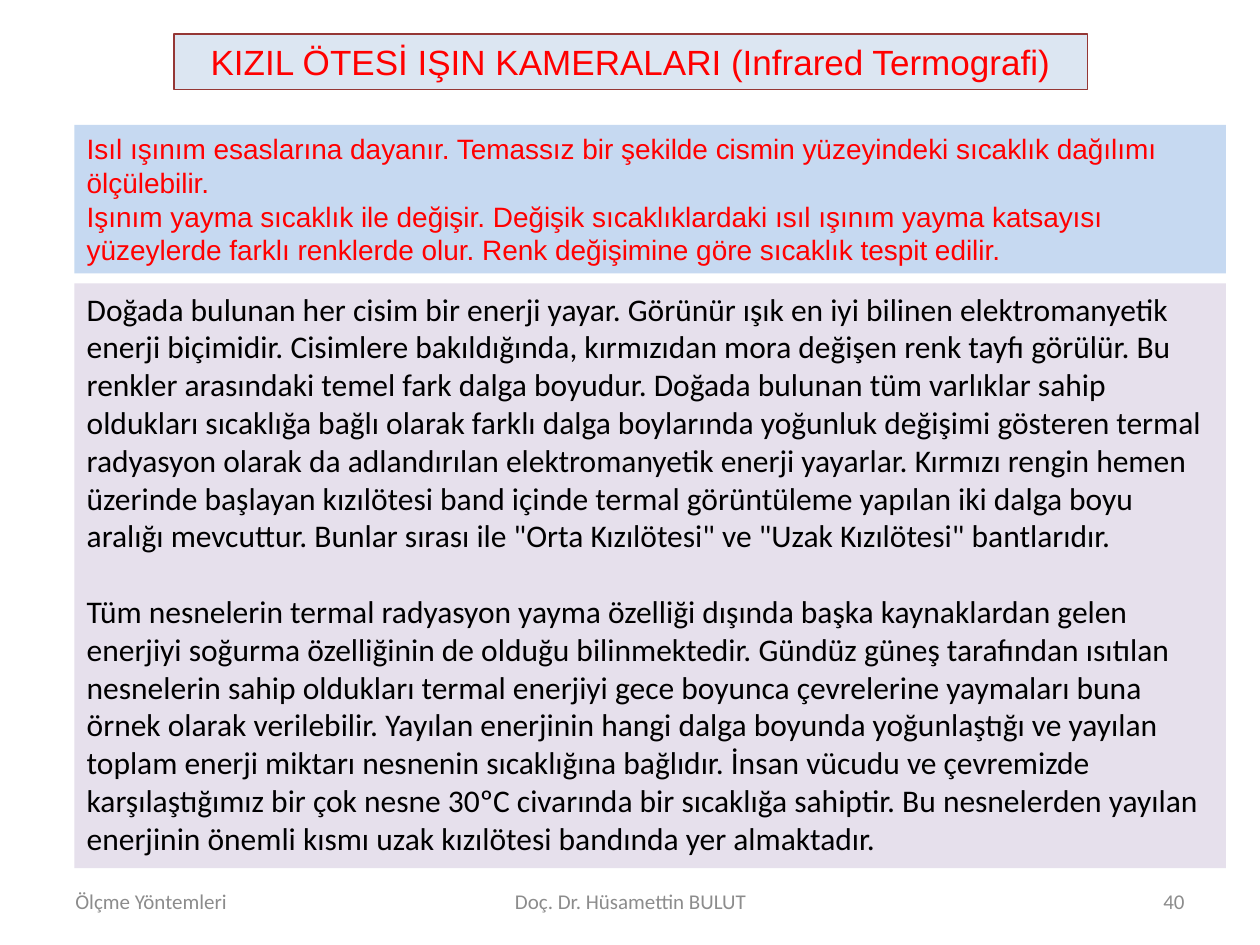
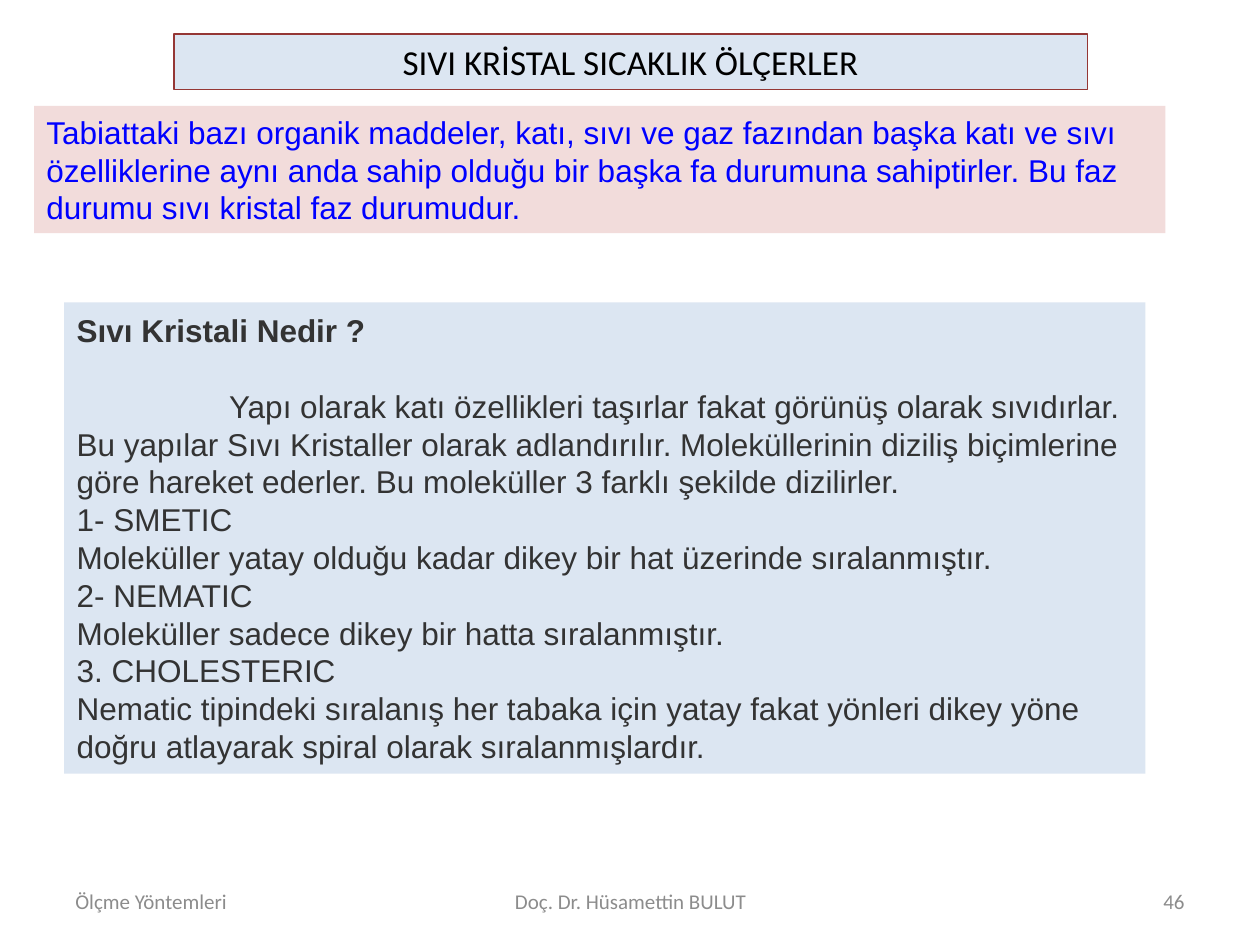
from pptx import Presentation
from pptx.dml.color import RGBColor
from pptx.enum.shapes import MSO_SHAPE as Shape
from pptx.enum.text import MSO_ANCHOR as Anchor, MSO_AUTO_SIZE as AutoSize, PP_ALIGN as Align
from pptx.util import Inches, Pt

# Shared colours
RED = RGBColor(0xFF, 0x00, 0x00)
BLUE = RGBColor(0x00, 0x00, 0xFF)
BLACK = RGBColor(0x00, 0x00, 0x00)
CHARCOAL = RGBColor(0x33, 0x33, 0x33)
GREY = RGBColor(0x8C, 0x8C, 0x8C)
MAROON = RGBColor(0x95, 0x37, 0x35)
PALE_BLUE = RGBColor(0xDC, 0xE6, 0xF2)
SKY = RGBColor(0xC6, 0xD9, 0xF1)
LILAC = RGBColor(0xE6, 0xE0, 0xEC)
ROSE = RGBColor(0xF2, 0xDC, 0xDB)

BLANK_LINE = Pt(21.6)


def write(shape, paragraphs, size=18, font="Arial", color=BLACK, align=Align.LEFT,
          anchor=Anchor.MIDDLE, bold=(), gaps=(), indents=()):
    """Fill a shape; bold, gaps and indents name the paragraphs they apply to."""
    frame = shape.text_frame
    frame.word_wrap = True
    frame.auto_size = AutoSize.NONE
    frame.vertical_anchor = anchor
    frame.text = "\n".join(paragraphs)
    for number, paragraph in enumerate(frame.paragraphs):
        paragraph.alignment = align
        paragraph.space_before = BLANK_LINE if number in gaps else Pt(0)
        if number in indents:
            paragraph._p.get_or_add_pPr().set("indent", str(Inches(1.21)))
        for run in paragraph.runs:
            run.font.size = Pt(size)
            run.font.name = font
            run.font.color.rgb = color
            run.font.bold = number in bold


# Content: page number, title with its format, then panels (place, fill, text, format)
PAGES = [
    ("40", "KIZIL ÖTESİ IŞIN KAMERALARI (Infrared Termografi)",
     dict(font="Arial", color=RED), [
         ((0.59, 0.99, 9.14, 1.18), SKY, [
             "Isıl ışınım esaslarına dayanır. Temassız bir şekilde cismin yüzeyindeki "
             "sıcaklık dağılımı ölçülebilir.",
             "Işınım yayma sıcaklık ile değişir. Değişik sıcaklıklardaki ısıl ışınım yayma "
             "katsayısı yüzeylerde farklı renklerde olur. Renk değişimine göre sıcaklık "
             "tespit edilir.",
         ], dict(size=16, color=RED)),
         ((0.59, 2.25, 9.14, 4.64), LILAC, [
             "Doğada bulunan her cisim bir enerji yayar. Görünür ışık en iyi bilinen "
             "elektromanyetik enerji biçimidir. Cisimlere bakıldığında, kırmızıdan mora "
             "değişen renk tayfı görülür. Bu renkler arasındaki temel fark dalga boyudur. "
             "Doğada bulunan tüm varlıklar sahip oldukları sıcaklığa bağlı olarak farklı "
             "dalga boylarında yoğunluk değişimi gösteren termal radyasyon olarak da "
             "adlandırılan elektromanyetik enerji yayarlar. Kırmızı rengin hemen üzerinde "
             "başlayan kızılötesi band içinde termal görüntüleme yapılan iki dalga boyu "
             'aralığı mevcuttur. Bunlar sırası ile "Orta Kızılötesi" ve "Uzak Kızılötesi" '
             "bantlarıdır.",
             "Tüm nesnelerin termal radyasyon yayma özelliği dışında başka kaynaklardan "
             "gelen enerjiyi soğurma özelliğinin de olduğu bilinmektedir. Gündüz güneş "
             "tarafından ısıtılan nesnelerin sahip oldukları termal enerjiyi gece boyunca "
             "çevrelerine yaymaları buna örnek olarak verilebilir. Yayılan enerjinin hangi "
             "dalga boyunda yoğunlaştığı ve yayılan toplam enerji miktarı nesnenin "
             "sıcaklığına bağlıdır. İnsan vücudu ve çevremizde karşılaştığımız bir çok "
             "nesne 30ºC civarında bir sıcaklığa sahiptir. Bu nesnelerden yayılan enerjinin "
             "önemli kısmı uzak kızılötesi bandında yer almaktadır.",
         ], dict(font="Calibri", anchor=Anchor.TOP, gaps=[1])),
     ]),
    ("46", "SIVI KRİSTAL SICAKLIK ÖLÇERLER",
     dict(font="Calibri", color=BLACK), [
         ((0.27, 0.84, 8.98, 1.01), ROSE, [
             "Tabiattaki bazı organik maddeler, katı, sıvı ve gaz fazından başka katı ve "
             "sıvı özelliklerine aynı anda sahip olduğu bir başka fa durumuna sahiptirler. "
             "Bu faz durumu sıvı kristal faz durumudur.",
         ], dict(color=BLUE)),
         ((0.51, 2.4, 8.58, 3.74), PALE_BLUE, [
             "Sıvı Kristali Nedir ?",
             "Yapı olarak katı özellikleri taşırlar fakat görünüş olarak sıvıdırlar. Bu "
             "yapılar Sıvı Kristaller olarak adlandırılır. Moleküllerinin diziliş "
             "biçimlerine göre hareket ederler. Bu moleküller 3 farklı şekilde dizilirler.",
             "1- SMETIC",
             "Moleküller yatay olduğu kadar dikey bir hat üzerinde sıralanmıştır.",
             "2- NEMATIC",
             "Moleküller sadece dikey bir hatta sıralanmıştır.",
             "3. CHOLESTERIC",
             "Nematic tipindeki sıralanış her tabaka için yatay fakat yönleri dikey yöne "
             "doğru atlayarak spiral olarak sıralanmışlardır.",
         ], dict(color=CHARCOAL, bold=[0], gaps=[1], indents=[1])),
     ]),
]

deck = Presentation()
deck.slide_width, deck.slide_height = Inches(10), Inches(7.5)
title_only = deck.slide_layouts[5]

for page_number, heading, heading_format, panels in PAGES:
    slide = deck.slides.add_slide(title_only)

    # Framed title
    title = slide.shapes.title
    title.left, title.top = Inches(1.38), Inches(0.27)
    title.width, title.height = Inches(7.25), Inches(0.44)
    title.fill.solid()
    title.fill.fore_color.rgb = PALE_BLUE
    title.line.color.rgb = MAROON
    title.line.width = Pt(0.75)
    write(title, [heading], size=20, align=Align.CENTER, **heading_format)

    # Text panels
    for place, fill, paragraphs, text_format in panels:
        panel = slide.shapes.add_shape(Shape.RECTANGLE, *map(Inches, place))
        panel.shadow.inherit = False
        panel.fill.solid()
        panel.fill.fore_color.rgb = fill
        panel.line.fill.background()
        write(panel, paragraphs, **text_format)

    # Footer: course, lecturer, page number
    for left, width, words, align in [
        (0.5, 2.33, "Ölçme Yöntemleri", Align.LEFT),
        (3.42, 3.17, "Doç. Dr. Hüsamettin BULUT", Align.CENTER),
        (7.17, 2.33, page_number, Align.RIGHT),
    ]:
        footer = slide.shapes.add_textbox(Inches(left), Inches(6.95), Inches(width), Inches(0.4))
        write(footer, [words], size=12, font="Calibri", color=GREY, align=align)

deck.save("out.pptx")
